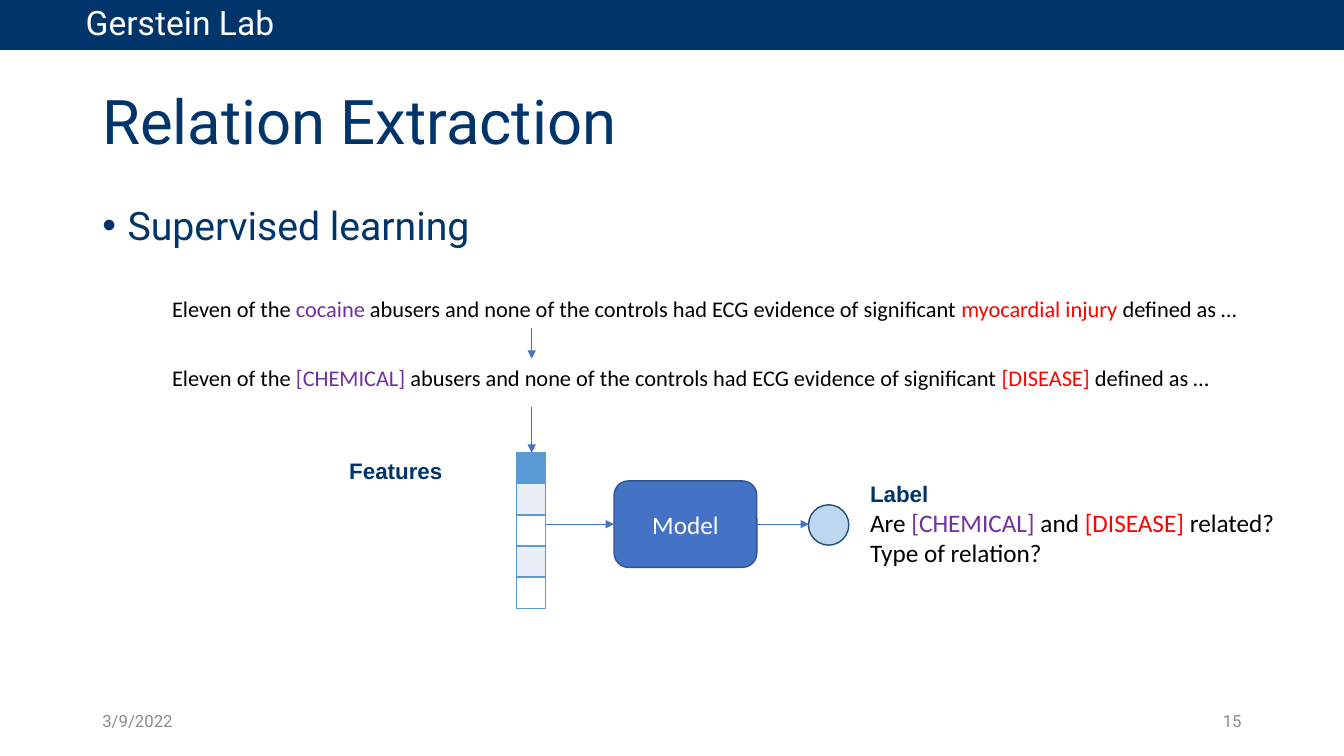
from typing import NamedTuple

import lxml.etree
import pptx
import pptx.dml.color
import pptx.enum.shapes
import pptx.enum.text
import pptx.oxml
import pptx.oxml.ns
import pptx.util

ALIGN = pptx.enum.text.PP_ALIGN
ANCHOR = pptx.enum.text.MSO_ANCHOR
SHAPE = pptx.enum.shapes.MSO_SHAPE
qn = pptx.oxml.ns.qn

COLS, ROWS = 160, 90
NAVY, BLACK, WHITE, GREY = "00356B", "000000", "FFFFFF", "8C8C8C"
PURPLE, RED, BLUE, SKY, PALE = "7030A0", "FF0000", "4472C4", "5B9BD5", "EAEFF7"

prs = pptx.Presentation()
prs.slide_width = pptx.util.Inches(13.33)
prs.slide_height = pptx.util.Inches(7.5)
s = prs.slides.add_slide(prs.slide_layouts[6])


class Box(NamedTuple):
    """A place on the slide in grid columns and rows."""
    left: float
    top: float
    width: float
    height: float


class Style(NamedTuple):
    size: float
    font: str
    color: str = NAVY
    bold: bool = False


class Words(NamedTuple):
    text: str
    style: Style


class Label(NamedTuple):
    box: Box
    lines: list[list[Words]]
    anchor: ANCHOR = ANCHOR.TOP
    align: ALIGN = ALIGN.LEFT
    spacing: float = 1.0
    bullet: str = ""


class Arrow(NamedTuple):
    x1: float
    y1: float
    x2: float
    y2: float


def col(n: float) -> int:
    return round(prs.slide_width * n / COLS)


def row(n: float) -> int:
    return round(prs.slide_height * n / ROWS)


def place(box: Box) -> tuple[int, int, int, int]:
    return col(box.left), row(box.top), col(box.width), row(box.height)


def rgb(color: str) -> pptx.dml.color.RGBColor:
    return pptx.dml.color.RGBColor.from_string(color)


def format_run(r, style: Style) -> None:
    r.font.size = pptx.util.Pt(style.size)
    r.font.name = style.font
    r.font.bold = style.bold
    r.font.color.rgb = rgb(style.color)


def add_label(label: Label) -> None:
    tf = s.shapes.add_textbox(*place(label.box)).text_frame
    tf.word_wrap = True
    tf.vertical_anchor = label.anchor
    for i, line in enumerate(label.lines):
        p = tf.add_paragraph() if i else tf.paragraphs[0]
        p.alignment = label.align
        p.line_spacing = label.spacing
        if label.bullet:
            pPr = p._p.get_or_add_pPr()
            pPr.set("marL", str(pptx.util.Inches(0.25)))
            pPr.set("indent", str(-pptx.util.Inches(0.25)))
            font = lxml.etree.SubElement(pPr, qn("a:buFont"))
            font.set("typeface", "Arial")
            lxml.etree.SubElement(pPr, qn("a:buChar")).set("char", label.bullet)
        for words in line:
            r = p.add_run()
            r.text = words.text
            format_run(r, words.style)


def add_grid(box: Box, fills: list[list[str]], border: str):
    """Add a table with one cell per fill colour and lines on all sides."""
    table = s.shapes.add_table(len(fills), len(fills[0]), *place(box)).table
    table.first_row = table.horz_banding = False
    for i, colors in enumerate(fills):
        for j, color in enumerate(colors):
            cell = table.cell(i, j)
            cell.margin_left = cell.margin_right = 0
            cell.margin_top = cell.margin_bottom = 0
            tcPr = cell._tc.get_or_add_tcPr()
            for side in ("lnL", "lnR", "lnT", "lnB"):
                ln = lxml.etree.SubElement(tcPr, qn(f"a:{side}"))
                ln.set("w", str(pptx.util.Pt(1)))
                fill = lxml.etree.SubElement(ln, qn("a:solidFill"))
                lxml.etree.SubElement(fill, qn("a:srgbClr")).set("val", border)
            cell.fill.solid()
            cell.fill.fore_color.rgb = rgb(color)
    return table


def add_node(kind: SHAPE, box: Box, fill: str, line: str):
    sp = s.shapes.add_shape(kind, *place(box))
    sp.shadow.inherit = False
    sp.fill.solid()
    sp.fill.fore_color.rgb = rgb(fill)
    sp.line.color.rgb = rgb(line)
    sp.line.width = pptx.util.Pt(1)
    return sp


def add_arrow(arrow: Arrow):
    c = s.shapes.add_connector(
        pptx.enum.shapes.MSO_CONNECTOR.STRAIGHT,
        col(arrow.x1), row(arrow.y1), col(arrow.x2), row(arrow.y2))
    c.line.color.rgb = rgb(BLUE)
    c.line.width = pptx.util.Pt(0.5)
    tail = lxml.etree.SubElement(c.line._get_or_add_ln(), qn("a:tailEnd"))
    tail.set("type", "triangle")
    lxml.etree.SubElement(c._element.spPr, qn("a:effectLst"))
    return c


def tagged(style: Style, *texts: str) -> list[Words]:
    """Colour the second text as the chemical and the fourth as the disease."""
    colors = (style.color, PURPLE, style.color, RED, style.color)
    return [Words(t, style._replace(color=c)) for t, c in zip(texts, colors)]


HEADING = Style(16, "Arial", bold=True)
SENTENCE = Style(16, "Calibri", BLACK)
QUESTION = Style(18, "Calibri", BLACK)
FOOTER = Style(12, "Roboto", GREY)
MIDDLE_ROW = 62.4
CONTROLS = "abusers and none of the controls had ECG evidence of significant "

header = add_grid(Box(0, -0.1, COLS, 6), [[NAVY] * 3], NAVY)
header_cell = header.cell(0, 0)
header_cell.margin_left = col(10.2)
header_cell.margin_top = header_cell.margin_bottom = row(0.6)
header_cell.text_frame.text = "Gerstein Lab"
format_run(header_cell.text_frame.paragraphs[0].runs[0], Style(24, "Roboto", WHITE))

labels = [
    Label(Box(11, 24, 138, 57.1),
          [[Words("Supervised learning", Style(28, "Roboto"))]],
          spacing=0.9, bullet="•"),
    Label(Box(11, 8.25, 138, 13.25),
          [[Words("Relation Extraction", Style(44, "Roboto"))]],
          ANCHOR.MIDDLE, spacing=0.9),
    Label(Box(11, 83.4, 36, 4.8), [[Words("3/9/2022", FOOTER)]], ANCHOR.MIDDLE),
    Label(Box(113, 83.4, 36, 4.8), [[Words("15", FOOTER)]], ANCHOR.MIDDLE, ALIGN.RIGHT),
    Label(Box(19.3, 34.6, 138, 4.4),
          [tagged(SENTENCE, "Eleven of the ", "cocaine", " " + CONTROLS,
                  "myocardial injury ", "defined as …")]),
    Label(Box(19.3, 42.7, 138, 4.4),
          [tagged(SENTENCE, "Eleven of the ", "[CHEMICAL] ", CONTROLS,
                  "[DISEASE] ", "defined as …")]),
    Label(Box(102.4, 56.6, 54.7, 11.8),
          [[Words("Label", HEADING)],
           tagged(QUESTION, "Are ", "[CHEMICAL] ", "and ", "[DISEASE] ", "related?"),
           [Words("Type of relation?", QUESTION)]]),
    Label(Box(40.4, 53.8, 22.9, 4.4), [[Words("Features", HEADING)]]),
]
for label in labels:
    add_label(label)

add_grid(Box(61.5, 53.9, 3.4, 18.5), [[c] for c in (SKY, PALE, WHITE, PALE, WHITE)], SKY)

model = add_node(SHAPE.ROUNDED_RECTANGLE, Box(73.1, MIDDLE_ROW - 5.15, 17, 10.3), BLUE, "325491")
model.text_frame.text = "Model"
model.text_frame.vertical_anchor = ANCHOR.MIDDLE
model.text_frame.paragraphs[0].alignment = ALIGN.CENTER
format_run(model.text_frame.paragraphs[0].runs[0], Style(18, "Calibri", WHITE))
add_node(SHAPE.OVAL, Box(96.25, 60.1, 4.8, 4.8), "BDD7EE", "1F4E79")

add_arrow(Arrow(63.3, 39, 63.3, 42.7))
add_arrow(Arrow(63.3, 48.4, 63.3, 53.9))
add_arrow(Arrow(65, MIDDLE_ROW, 73.1, MIDDLE_ROW)).end_connect(model, 1)
add_arrow(Arrow(90.1, MIDDLE_ROW, 96.3, MIDDLE_ROW)).begin_connect(model, 3)

prs.save("out.pptx")
